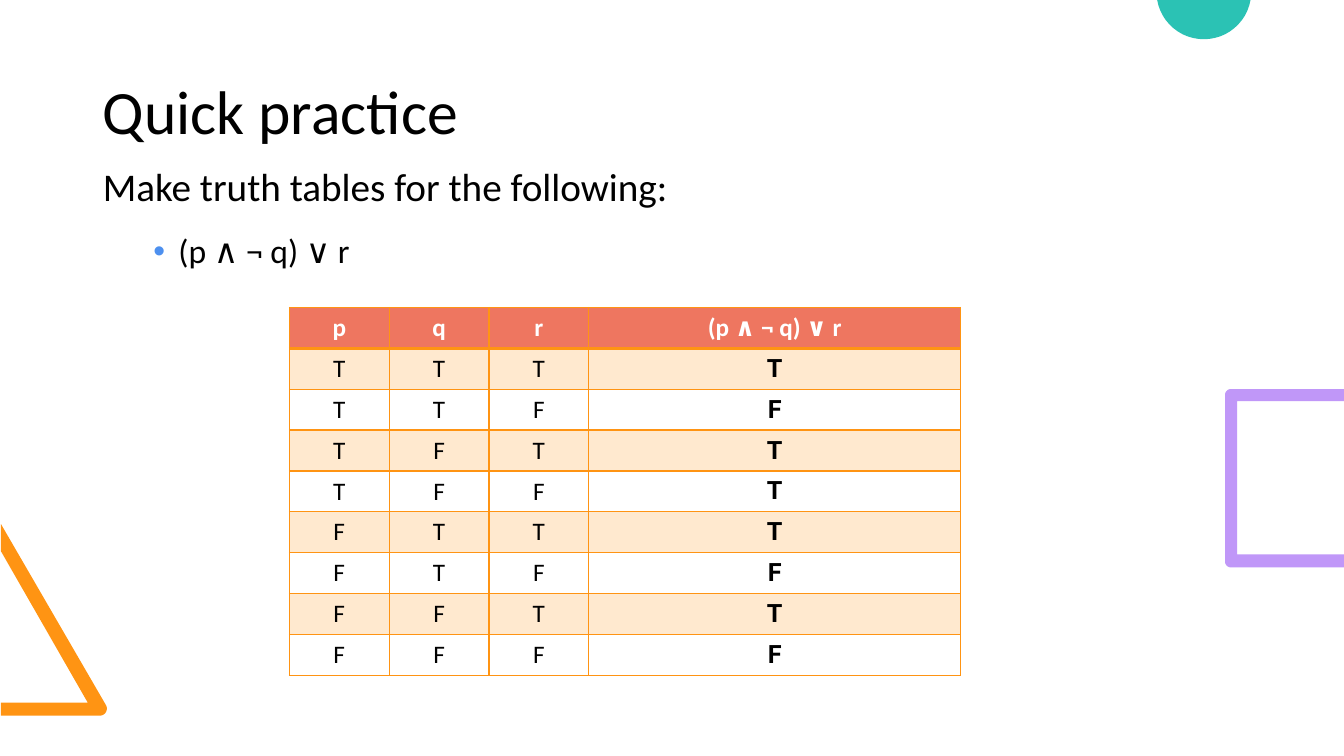
import dataclasses
import itertools
import math

import lxml.etree
import pptx
import pptx.dml.color
import pptx.enum.shapes
import pptx.enum.text
import pptx.oxml.ns
import pptx.util

Inches = pptx.util.Inches
Point = tuple[float, float]
FORM = "(p ∧ ¬ q) ∨ r"
ORANGE = "FF9413"
CORAL = "EE7660"
BLACK = "000000"
WHITE = "FFFFFF"


@dataclasses.dataclass
class Patch:
    color: str
    points: list[Point]


@dataclasses.dataclass
class Style:
    size: float
    color: str = BLACK
    bold: bool = False
    font: str = "Calibri"


def arc(x: float, y: float, r: float, start: int, end: int) -> list[Point]:
    turns = [math.radians(start + (end - start) * i / 24) for i in range(25)]
    return [(x + r * math.cos(t), y + r * math.sin(t)) for t in turns]


def paint(target, color: str) -> None:
    target.rgb = pptx.dml.color.RGBColor.from_string(color)


def add(parent, tag: str, **attrs: str):
    return lxml.etree.SubElement(parent, pptx.oxml.ns.qn(tag), attrs)


def draw(slide, patch: Patch) -> None:
    spots = [(Inches(x), Inches(y)) for x, y in patch.points]
    form = slide.shapes.build_freeform(*spots[0], scale=1.0)
    form.add_line_segments(spots[1:], close=True)
    shape = form.convert_to_shape()
    shape.shadow.inherit = False
    shape.fill.solid()
    paint(shape.fill.fore_color, patch.color)
    shape.line.fill.background()


def write(para, text: str, style: Style) -> None:
    para.text = text
    for run in para.runs:
        run.font.name = style.font
        run.font.size = pptx.util.Pt(style.size)
        run.font.bold = style.bold
        paint(run.font.color, style.color)


def place(shape, left: float, top: float, width: float, height: float):
    shape.left, shape.top = Inches(left), Inches(top)
    shape.width, shape.height = Inches(width), Inches(height)
    frame = shape.text_frame
    frame.word_wrap = True
    frame.auto_size = pptx.enum.text.MSO_AUTO_SIZE.NONE
    return frame


def indent(para, left: float, hang: float, bullet: str = "") -> None:
    props = para._p.get_or_add_pPr()
    props.set("marL", str(Inches(left)))
    props.set("indent", str(Inches(hang)))
    if bullet:
        add(add(props, "a:buClr"), "a:srgbClr", val=bullet)
        add(props, "a:buFont", typeface="Arial")
        add(props, "a:buChar", char="•")
    else:
        add(props, "a:buNone")


def edge(cell, head: bool) -> None:
    props = cell._tc.get_or_add_tcPr()
    for side in "LRTB":
        width = pptx.util.Pt(2 if head and side == "B" else 1)
        line = add(props, f"a:ln{side}", w=str(width))
        add(add(line, "a:solidFill"), "a:srgbClr", val=ORANGE)


def tint(cell, row: int) -> None:
    if row and row % 2 == 0:
        cell.fill.background()
        return
    cell.fill.solid()
    paint(cell.fill.fore_color, ORANGE if row else CORAL)
    if row:
        add(cell._tc.get_or_add_tcPr()[-1][0], "a:alpha", val="20000")


def titles(slide) -> None:
    title, body = slide.placeholders
    frame = place(title, 0.92, 0.33, 11.5, 1.61)
    frame.vertical_anchor = pptx.enum.text.MSO_ANCHOR.MIDDLE
    head = frame.paragraphs[0]
    write(head, "Quick practice", Style(44))
    head.alignment = pptx.enum.text.PP_ALIGN.LEFT
    head.line_spacing = 0.9

    frame = place(body, 0.92, 1.61, 8.94, 5.41)
    task, item = frame.paragraphs[0], frame.add_paragraph()
    write(task, "Make truth tables for the following:", Style(28))
    write(item, FORM, Style(24))
    item.level = 1
    for para in (task, item):
        para.line_spacing = 0.9
        para.space_before = pptx.util.Pt(10)
        para.space_after = pptx.util.Pt(8)
    indent(task, 0, 0)
    indent(item, 0.75, -0.25, "4D90EF")


def truths(slide) -> None:
    rows = [("p", "q", "r", FORM)]
    for p, q, r in itertools.product((True, False), repeat=3):
        facts = (p, q, r, (p and not q) or r)
        rows.append(tuple("T" if fact else "F" for fact in facts))
    frame = slide.shapes.add_table(
        len(rows), 4, Inches(2.87), Inches(3.05), Inches(6.66), Inches(3.65)
    )
    table = frame.table
    table.horz_banding = False
    for col, width in zip(table.columns, (0.99, 0.99, 0.99, 3.69)):
        col.width = Inches(width)
    for i, row in enumerate(rows):
        for j, text in enumerate(row):
            cell = table.cell(i, j)
            cell.vertical_anchor = pptx.enum.text.MSO_ANCHOR.MIDDLE
            para = cell.text_frame.paragraphs[0]
            para.alignment = pptx.enum.text.PP_ALIGN.CENTER
            if i == 0:
                style = Style(18, WHITE, True)
            elif j == 3:
                style = Style(18, bold=True, font="Roboto")
            else:
                style = Style(18)
            write(para, text, style)
            edge(cell, i == 0)
            tint(cell, i)


def main() -> None:
    deck = pptx.Presentation()
    deck.slide_width, deck.slide_height = Inches(13.33), Inches(7.5)
    slide = deck.slides.add_slide(deck.slide_layouts[1])
    triangle = Patch(ORANGE, [
        (0.01, 7.1), (0.01, 6.97), (0.87, 6.97), (0.01, 5.47), (0.01, 5.2),
        *arc(0.99, 7.03, 0.07, -30, 90),
    ])
    circle = Patch("2BC2B4", arc(11.94, -0.08, 0.47, 10, 170))
    square = Patch("C097F8", [
        (13.33, 5.63), (13.33, 5.5), (12.27, 5.5),
        (12.27, 3.98), (13.33, 3.98), (13.33, 3.86),
        *arc(12.21, 3.92, 0.06, 270, 180),
        *arc(12.21, 5.57, 0.06, 180, 90),
    ])
    for patch in (triangle, circle, square):
        draw(slide, patch)
    titles(slide)
    truths(slide)
    deck.save("out.pptx")


if __name__ == "__main__":
    main()
